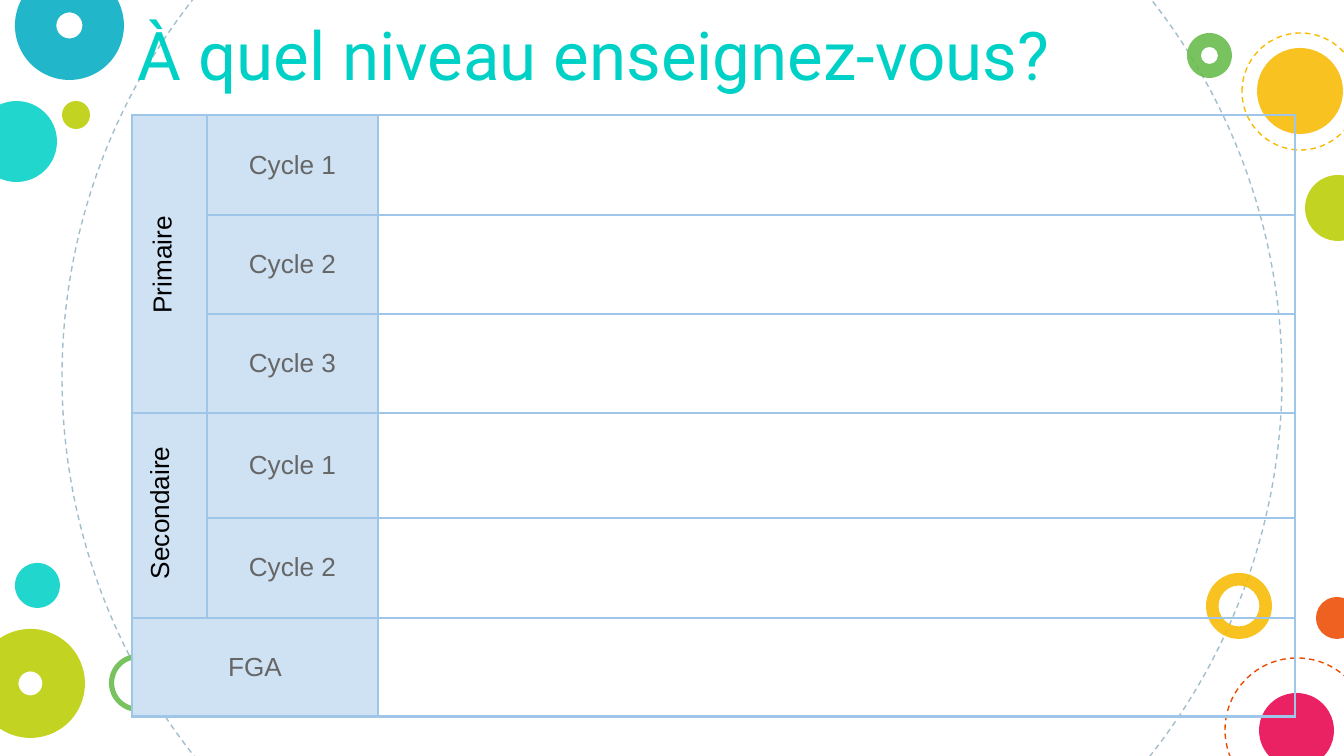
from lxml.etree import SubElement
from pptx import Presentation
from pptx.dml.color import RGBColor
from pptx.enum.dml import MSO_LINE
from pptx.enum.shapes import MSO_SHAPE
from pptx.enum.text import MSO_ANCHOR, PP_ALIGN
from pptx.oxml.ns import qn
from pptx.util import Pt

EMU_PER_PX = 9144000 / 1344
COLORS = {
    "turquoise": "00D1C6", "blue": "00ACC3", "lime": "BBCD00", "green": "65BB48",
    "yellow": "F8BB00", "orange": "ED4A00", "pink": "E8004C", "gray_blue": "A1BECC",
    "border": "9FC5E8", "header": "CFE2F3", "gray": "666666", "black": "000000",
}
RINGS = [
    (62, -233, 1220, "gray_blue"), (1225, 658, 144, "orange"), (1242, 33, 117, "yellow"),
]
DISCS = [
    (-24, 101, 81, "turquoise"), (62, 101, 28, "lime"), (1316, 597, 42, "orange"),
    (1259, 693, 75, "pink"), (1257, 48, 86, "yellow"), (1305, 175, 66, "lime"),
    (15, 563, 45, "turquoise"),
]
DONUTS = [
    (1206, 573, 66, "yellow", 0.19), (15, -29, 109, "blue", 0.38),
    (109, 654, 58, "green", 0.09), (-24, 629, 109, "lime", 0.39),
    (1187, 33, 45, "green", 0.31),
]
COLUMN_WIDTHS = [75, 171, 917]
ROW_HEIGHTS = [100, 99, 99, 105, 100, 99]
MERGES = [(0, 0, 2, 0), (3, 0, 4, 0), (5, 0, 5, 1)]
LEVELS = ["Cycle 1", "Cycle 2", "Cycle 3", "Cycle 1", "Cycle 2"]


def px(*lengths):
    """Turn pixel lengths into a list of EMU lengths."""
    return [round(length * EMU_PER_PX) for length in lengths]


def rgb(name):
    """Look up a named colour."""
    return RGBColor.from_string(COLORS[name])


def write_text(frame, text, size=14, font="Arial", color="black", align=None,
               anchor=MSO_ANCHOR.TOP):
    """Write one formatted paragraph into a text frame."""
    frame.word_wrap = True
    frame.vertical_anchor = anchor
    paragraph = frame.paragraphs[0]
    paragraph.alignment = align
    run = paragraph.add_run()
    run.text = text
    run.font.size = Pt(size)
    run.font.name = font
    run.font.color.rgb = rgb(color)


def add_round(slide, kind, left, top, size):
    """Add a round shape without shadow."""
    shape = slide.shapes.add_shape(kind, *px(left, top, size, size))
    shape.shadow.inherit = False
    return shape


def add_ring(slide, left, top, size, color):
    """Add a dashed circle outline."""
    shape = add_round(slide, MSO_SHAPE.OVAL, left, top, size)
    shape.fill.background()
    shape.line.color.rgb = rgb(color)
    shape.line.width = Pt(0.75)
    shape.line.dash_style = MSO_LINE.DASH


def add_bubble(slide, left, top, size, color, thickness=None):
    """Add a translucent disc, or a donut when a thickness is given."""
    kind = MSO_SHAPE.OVAL if thickness is None else MSO_SHAPE.DONUT
    shape = add_round(slide, kind, left, top, size)
    if thickness is not None:
        shape.adjustments[0] = thickness
    shape.fill.solid()
    shape.fill.fore_color.rgb = rgb(color)
    fill_color = shape._element.spPr.find(qn("a:solidFill"))[0]
    SubElement(fill_color, qn("a:alpha"), val="87000")
    shape.line.fill.background()


def add_text(slide, text, left, top, width, height, rotation=0, **text_format):
    """Add a text box with even insets."""
    box = slide.shapes.add_textbox(*px(left, top, width, height))
    box.rotation = rotation
    frame = box.text_frame
    frame.margin_left, frame.margin_top, frame.margin_right, frame.margin_bottom = px(13, 13, 13, 13)
    write_text(frame, text, **text_format)


def style_cell(cell, is_header):
    """Set the borders, insets and fill of a cell."""
    properties = cell._tc.get_or_add_tcPr()
    for side in ("lnL", "lnR", "lnT", "lnB"):
        line = SubElement(properties, qn(f"a:{side}"), w=str(Pt(1.5)))
        fill = SubElement(line, qn("a:solidFill"))
        SubElement(fill, qn("a:srgbClr"), val=COLORS["border"])
    cell.margin_left, cell.margin_top, cell.margin_right, cell.margin_bottom = px(13, 13, 13, 13)
    if is_header:
        cell.fill.solid()
        cell.fill.fore_color.rgb = rgb("header")
    else:
        cell.fill.background()


def add_level_table(slide):
    """Add the table of school levels with its merged headers."""
    frame = slide.shapes.add_table(
        len(ROW_HEIGHTS), len(COLUMN_WIDTHS),
        *px(132, 115, sum(COLUMN_WIDTHS), sum(ROW_HEIGHTS)))
    table = frame.table
    table.first_row = table.horz_banding = False
    for column, width in zip(table.columns, px(*COLUMN_WIDTHS)):
        column.width = width
    for row, height in zip(table.rows, px(*ROW_HEIGHTS)):
        row.height = height
        for index, cell in enumerate(row.cells):
            style_cell(cell, is_header=index < 2)
    for top, left, bottom, right in MERGES:
        table.cell(top, left).merge(table.cell(bottom, right))
    labels = [(row, 1, text) for row, text in enumerate(LEVELS)] + [(5, 0, "FGA")]
    for row, column, text in labels:
        cell = table.cell(row, column)
        write_text(cell.text_frame, text, color="gray", align=PP_ALIGN.CENTER)
        cell.vertical_anchor = MSO_ANCHOR.MIDDLE


def main():
    """Build the slide and save it."""
    presentation = Presentation()
    presentation.slide_width, presentation.slide_height = px(1344, 756)
    slide = presentation.slides.add_slide(presentation.slide_layouts[6])
    for ring in RINGS:
        add_ring(slide, *ring)
    for bubble in DISCS + DONUTS:
        add_bubble(slide, *bubble)
    add_text(slide, "À quel niveau enseignez-vous?", 125, 0, 1118, 175,
             size=36, font="Roboto", color="turquoise")
    add_level_table(slide)
    add_text(slide, "Primaire", 93, 228, 138, 59, rotation=270)
    add_text(slide, "Secondaire", 79, 468, 175, 73, rotation=270)
    presentation.save("out.pptx")


if __name__ == "__main__":
    main()
